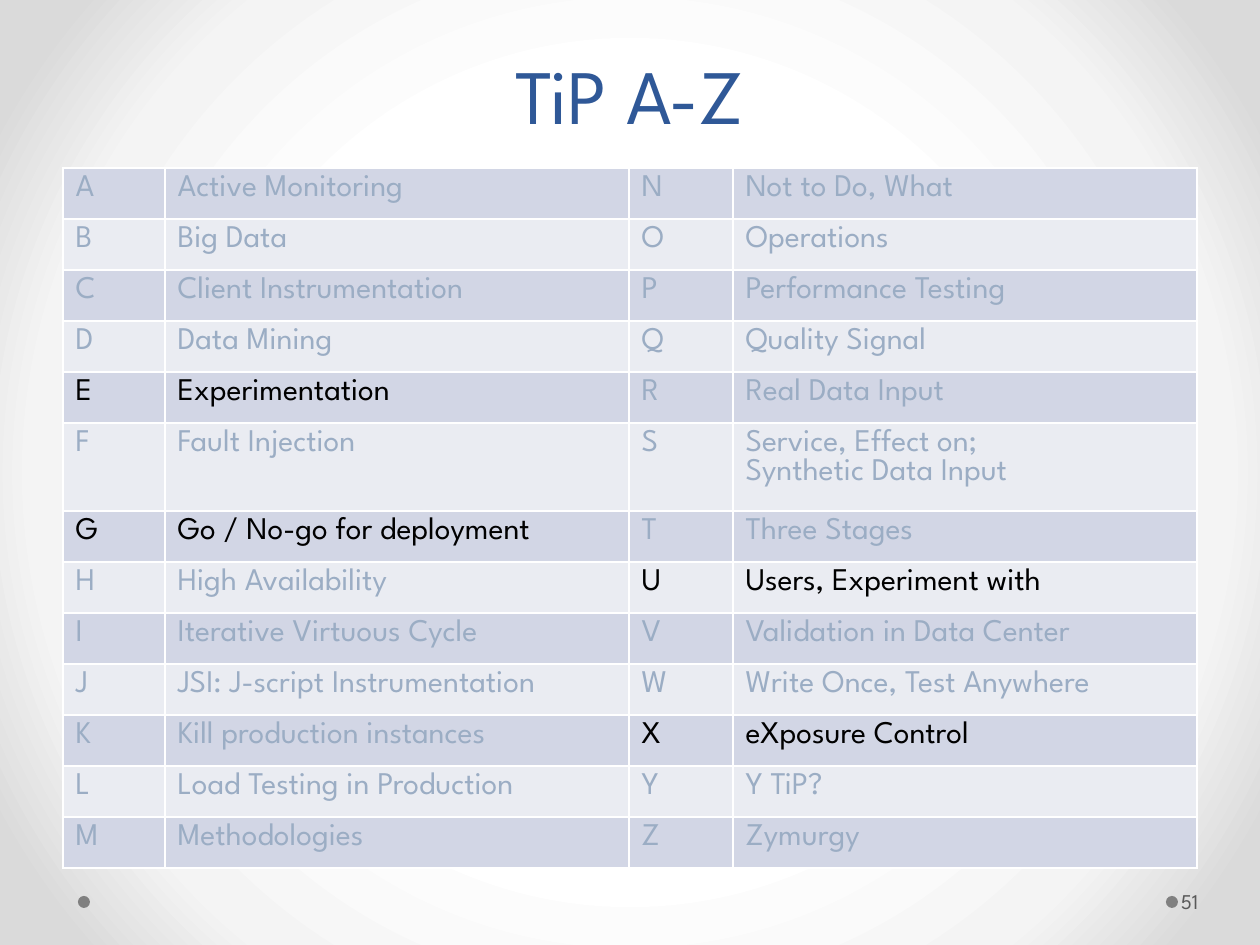
from pptx import Presentation
from pptx.dml.color import RGBColor
from pptx.enum.shapes import MSO_SHAPE
from pptx.enum.text import MSO_ANCHOR, PP_ALIGN
from pptx.oxml import parse_xml
from pptx.oxml.ns import nsdecls
from pptx.util import Pt

PX = 914400 // 126
OVAL = MSO_SHAPE.OVAL
TOP, MIDDLE, BOTTOM = MSO_ANCHOR.TOP, MSO_ANCHOR.MIDDLE, MSO_ANCHOR.BOTTOM
CENTER = PP_ALIGN.CENTER
FONT = "League Spartan"
MUTED, ACTIVE = "9BADC4", "000000"
BANDS = ("D2D6E5", "EAECF2")
STOPS = [(50, "FFFFFF"), (76, "F4F4F4"), (92, "DADADA")]

TITLE = "TiP A-Z"
PAGE = "51"
TOPICS = [
    ("A", "Active Monitoring"),
    ("B", "Big Data"),
    ("C", "Client Instrumentation"),
    ("D", "Data Mining"),
    ("E", "Experimentation"),
    ("F", "Fault Injection"),
    ("G", "Go / No-go for deployment"),
    ("H", "High Availability"),
    ("I", "Iterative Virtuous Cycle"),
    ("J", "JSI: J-script Instrumentation"),
    ("K", "Kill production instances"),
    ("L", "Load Testing in Production"),
    ("M", "Methodologies"),
    ("N", "Not to Do, What"),
    ("O", "Operations"),
    ("P", "Performance Testing"),
    ("Q", "Quality Signal"),
    ("R", "Real Data Input"),
    ("S", "Service, Effect on;\nSynthetic Data Input"),
    ("T", "Three Stages"),
    ("U", "Users, Experiment with"),
    ("V", "Validation in Data Center"),
    ("W", "Write Once, Test Anywhere"),
    ("X", "eXposure Control"),
    ("Y", "Y TiP?"),
    ("Z", "Zymurgy"),
]
CURRENT = "EGUX"
HALF = len(TOPICS) // 2
COLS = [102, 464, 104, 464]
ROW, TALL = 51, 71


def box(*lengths):
    return [n * PX for n in lengths]


def color(code):
    return RGBColor.from_string(code)


def write(frame, text, size, ink):
    frame.text = text
    for para in frame.paragraphs:
        for run in para.runs:
            run.font.name = FONT
            run.font.size = Pt(size)
            run.font.color.rgb = color(ink)


def label(slide, area, text, size, ink, anchor):
    frame = slide.shapes.add_textbox(*box(*area)).text_frame
    frame.word_wrap = True
    frame.vertical_anchor = anchor
    write(frame, text, size, ink)
    return frame


def backdrop(slide):
    """Fill the slide with a gradient that spreads from its centre."""
    stops = "".join(
        f'<a:gs pos="{pos * 1000}"><a:srgbClr val="{code}"/></a:gs>'
        for pos, code in STOPS)
    slide.element.cSld.insert(0, parse_xml(
        f'<p:bg {nsdecls("p", "a")}><p:bgPr><a:gradFill rotWithShape="1">'
        f'<a:gsLst>{stops}</a:gsLst><a:path path="circle">'
        '<a:fillToRect l="50000" t="50000" r="50000" b="50000"/></a:path>'
        '</a:gradFill><a:effectLst/></p:bgPr></p:bg>'))


def border(cell):
    props = cell._tc.get_or_add_tcPr()
    for spot, side in enumerate("LRTB"):
        props.insert(spot, parse_xml(
            f'<a:ln{side} {nsdecls("a")} w="12700"><a:solidFill>'
            f'<a:srgbClr val="FFFFFF"/></a:solidFill></a:ln{side}>'))


def dot(slide, left):
    mark = slide.shapes.add_shape(OVAL, *box(left, 896, 12, 12))
    mark.shadow.inherit = False
    mark.fill.solid()
    mark.fill.fore_color.rgb = color("808080")
    mark.line.fill.background()


def topics(slide):
    heights = [TALL if any("\n" in TOPICS[i][1] for i in (row, row + HALF))
               else ROW for row in range(HALF)]
    area = box(63, 168, sum(COLS), sum(heights))
    table = slide.shapes.add_table(HALF, len(COLS), *area).table
    table.first_row = table.horz_banding = False
    for col, width in zip(table.columns, COLS):
        col.width = width * PX
    for row, height in zip(table.rows, heights):
        row.height = height * PX
    for i, topic in enumerate(TOPICS):
        side, row = divmod(i, HALF)
        ink = ACTIVE if topic[0] in CURRENT else MUTED
        for j, text in enumerate(topic):
            cell = table.cell(row, side * 2 + j)
            cell.vertical_anchor = TOP
            cell.fill.solid()
            cell.fill.fore_color.rgb = color(BANDS[row % 2])
            border(cell)
            write(cell.text_frame, text, 18, ink)


def main():
    deck = Presentation()
    deck.slide_width, deck.slide_height = box(1260, 945)
    slide = deck.slides.add_slide(deck.slide_layouts[6])
    backdrop(slide)
    for left in (1166, 78):
        dot(slide, left)
    head = label(slide, (63, 10, 1134, 136), TITLE, 44, "2F5897", BOTTOM)
    head.paragraphs[0].alignment = CENTER
    head.paragraphs[0].line_spacing = Pt(58)
    topics(slide)
    page = label(slide, (1177, 876, 77, 50), PAGE, 12, "595959", MIDDLE)
    page.margin_left, page.margin_right = box(4, 6)
    deck.save("out.pptx")


if __name__ == "__main__":
    main()
